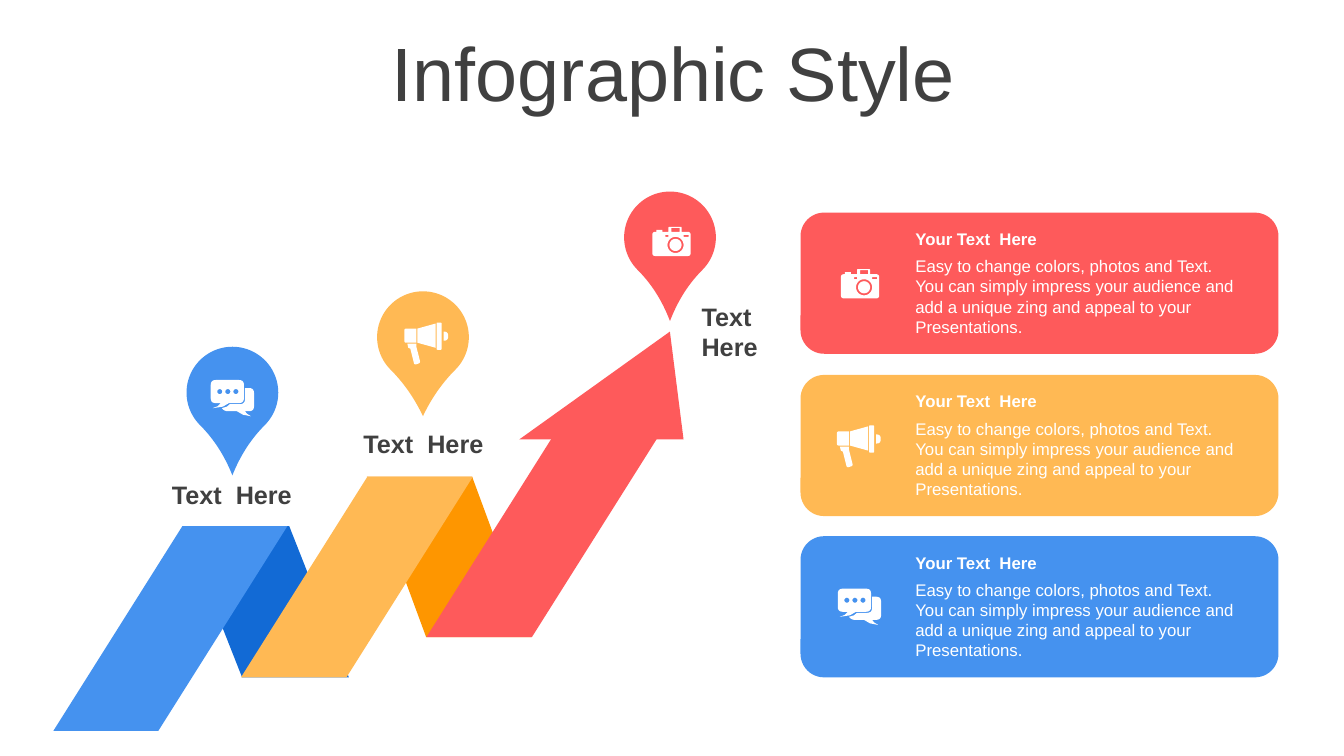
import math

import pptx
import pptx.dml.color
import pptx.enum.shapes
import pptx.enum.text
import pptx.util

Inches = pptx.util.Inches
RGBColor = pptx.dml.color.RGBColor
SHAPE = pptx.enum.shapes.MSO_SHAPE
ALIGN = pptx.enum.text.PP_ALIGN
ANCHOR = pptx.enum.text.MSO_ANCHOR
FIT = pptx.enum.text.MSO_AUTO_SIZE

RED = RGBColor(0xFE, 0x5A, 0x5B)
YELLOW = RGBColor(0xFF, 0xB9, 0x54)
ORANGE = RGBColor(0xFE, 0x96, 0x00)
BLUE = RGBColor(0x45, 0x92, 0xEF)
NAVY = RGBColor(0x12, 0x6A, 0xD5)
DARK = RGBColor(0x40, 0x40, 0x40)
WHITE = RGBColor(0xFF, 0xFF, 0xFF)

LABEL = "Text  Here"
CARD_HEADING = "Your Text  Here"
CARD_BODY = ("Easy to change colors, photos and Text. You can simply impress your "
             "audience and add a unique zing and appeal to your Presentations.")


# Icon contours, in hundredths of an inch
def ring(center_x, center_y, radius, steps=32):
    angles = [2 * math.pi * step / steps for step in range(steps)]
    return [(center_x + radius * math.cos(angle), center_y + radius * math.sin(angle))
            for angle in angles]


def outline(*corners, steps=5):
    """Closed outline; a third value in a corner is its rounding radius."""
    points = []
    for index, (x, y, *radius) in enumerate(corners):
        if not radius:
            points.append((x, y))
            continue
        ends = []
        for other in (corners[index - 1], corners[(index + 1) % len(corners)]):
            reach = radius[0] / math.dist((x, y), other[:2])
            ends.append((x + (other[0] - x) * reach, y + (other[1] - y) * reach))
        (ax, ay), (bx, by) = ends
        for step in range(steps + 1):
            t = step / steps
            points.append(((1 - t) ** 2 * ax + 2 * t * (1 - t) * x + t * t * bx,
                           (1 - t) ** 2 * ay + 2 * t * (1 - t) * y + t * t * by))
    return points


def rectangle(left, top, right, bottom, radius=0.01):
    return outline((left, top, radius), (right, top, radius),
                   (right, bottom, radius), (left, bottom, radius))


CHAT = [
    outline((34, 8), (43, 8, 5), (43, 31, 5), (34, 31), (36, 33.5), (40, 36),
            (32, 34.5), (26, 31), (14, 31, 3), (11, 28), (16, 26.5), (19, 24),
            (34, 24, 5)),
    outline((0, 0, 5), (33, 0, 5), (33, 23, 5), (18, 23), (12, 26.5), (2, 28),
            (7, 26), (10, 23), (0, 23, 5)),
    *[ring(x, 11.5, 2.5) for x in (9, 17, 25)],
]
MEGAPHONE = [
    outline((3, 21), (12, 21), (12, 24), (16, 40, 2), (10, 42, 2), (6, 26), (4, 25)),
    outline((39, 9), (43.5, 9, 4), (43.5, 18, 4), (39, 18)),
    outline((0, 6, 2), (12, 6), (12, 20), (0, 20, 2)),
    outline((31, 1), (31, 25), (13, 20), (13, 6)),
    rectangle(32, 0, 37, 27, 1),
]
CAMERA = [
    outline((16, 0, 1), (29, 0, 1), (29, 5), (38, 5, 3), (38, 29, 3), (0, 29, 3),
            (0, 5, 3), (4, 5), (4, 3), (10, 3), (10, 5), (16, 5)),
    ring(23, 18, 8),
    ring(23, 18, 6),
    rectangle(13, 8, 16, 10),
    rectangle(31, 8, 36, 10),
    rectangle(19, 1, 27, 5),
]


class Painter:
    font = "Arial"

    def __init__(self, slide):
        self.slide = slide

    def paint(self, shape, color):
        shape.shadow.inherit = False
        shape.fill.solid()
        shape.fill.fore_color.rgb = color
        shape.line.fill.background()

    def fill_text(self, frame, text, size, color, bold=False, **layout):
        frame.word_wrap = True
        para = frame.paragraphs[0]
        span = para.add_run()
        span.text = text
        span.font.color.rgb = color
        formats = {"name": self.font, "size": pptx.util.Pt(size), "bold": bold}
        for target, values in ((span.font, formats), (para, layout)):
            for name, value in values.items():
                setattr(target, name, value)

    def title(self, text, place):
        holder = self.slide.shapes.title
        for name, value in zip(("left", "top", "width", "height"), place):
            setattr(holder, name, Inches(value))
        holder.text_frame.auto_size = FIT.NONE
        holder.text_frame.vertical_anchor = ANCHOR.MIDDLE
        self.fill_text(holder.text_frame, text, 54, DARK, alignment=ALIGN.CENTER,
                       line_spacing=0.9, space_before=pptx.util.Pt(0))

    def text(self, text, place, size, color, bold=False, align=ALIGN.LEFT):
        box = self.slide.shapes.add_textbox(*map(Inches, place))
        self.fill_text(box.text_frame, text, size, color, bold, alignment=align)

    def shape(self, kind, place, color, adjust=None, turn=0, flip=False):
        shape = self.slide.shapes.add_shape(kind, *map(Inches, place))
        self.paint(shape, color)
        shape.rotation = turn
        if adjust is not None:
            shape.adjustments[0] = adjust
        if flip:
            shape._element.spPr.xfrm.set("flipV", "1")

    def icon(self, contours, left, top):
        placed = [[(Inches(left + x / 100), Inches(top + y / 100)) for x, y in contour]
                  for contour in contours]
        builder = self.slide.shapes.build_freeform(*placed[0][0])
        for number, points in enumerate(placed):
            if number:
                builder.move_to(*points[0])
            builder.add_line_segments(points[1:], close=True)
        self.paint(builder.convert_to_shape(), WHITE)


def main():
    deck = pptx.Presentation()
    deck.slide_width, deck.slide_height = Inches(13.33), Inches(7.5)
    painter = Painter(deck.slides.add_slide(deck.slide_layouts[5]))
    painter.title("Infographic Style", (0.35, 0.37, 12.66, 0.79))

    # Folded ribbon with its arrowhead: place, colour, slant, flipped
    for place, color, slant, flip in (
            ((3.64, 4.73, 1.63, 1.59), ORANGE, 0.369, True),
            ((1.81, 5.22, 1.65, 1.5), NAVY, 0.394, True),
            ((0.53, 5.22, 2.32, 2.03), BLUE, 0.63, False),
            ((2.39, 4.73, 2.3, 1.99), YELLOW, 0.63, False),
            ((4.23, 4.33, 2.3, 1.99), RED, 0.63, False)):
        painter.shape(SHAPE.PARALLELOGRAM, place, color, slant, flip=flip)
    painter.shape(SHAPE.ISOSCELES_TRIANGLE, (5.15, 3.29, 1.63, 1.07), RED, 0.917)

    # Map pins with icons and labels
    for left, top, color, tip, icon, icon_at, label_at, align in (
            (6.19, 1.9, RED, 1.29, CAMERA, (6.47, 2.25),
             (6.86, 2.94, 0.91, 0.71), ALIGN.LEFT),
            (3.74, 2.89, YELLOW, 1.218, MEGAPHONE, (4.01, 3.2),
             (3.42, 4.2, 1.56, 0.4), ALIGN.CENTER),
            (1.85, 3.44, BLUE, 1.276, CHAT, (2.09, 3.77),
             (1.52, 4.71, 1.56, 0.4), ALIGN.CENTER)):
        painter.shape(SHAPE.TEAR, (left, top, 0.91, 0.91), color, tip, turn=135)
        painter.icon(icon, *icon_at)
        painter.text(LABEL, label_at, 18, DARK, True, align)

    # Description cards
    for top, color, icon, icon_at in (
            (2.11, RED, CAMERA, (8.34, 2.67)),
            (3.72, YELLOW, MEGAPHONE, (8.3, 4.22)),
            (5.32, BLUE, CHAT, (8.31, 5.84))):
        painter.shape(SHAPE.ROUNDED_RECTANGLE, (7.94, top, 4.74, 1.4), color)
        painter.icon(icon, *icon_at)
        painter.text(CARD_HEADING, (8.98, top + 0.11, 3.42, 0.3), 12, WHITE, True)
        painter.text(CARD_BODY, (8.98, top + 0.38, 3.42, 0.91), 12, WHITE)

    deck.save("out.pptx")


if __name__ == "__main__":
    main()
